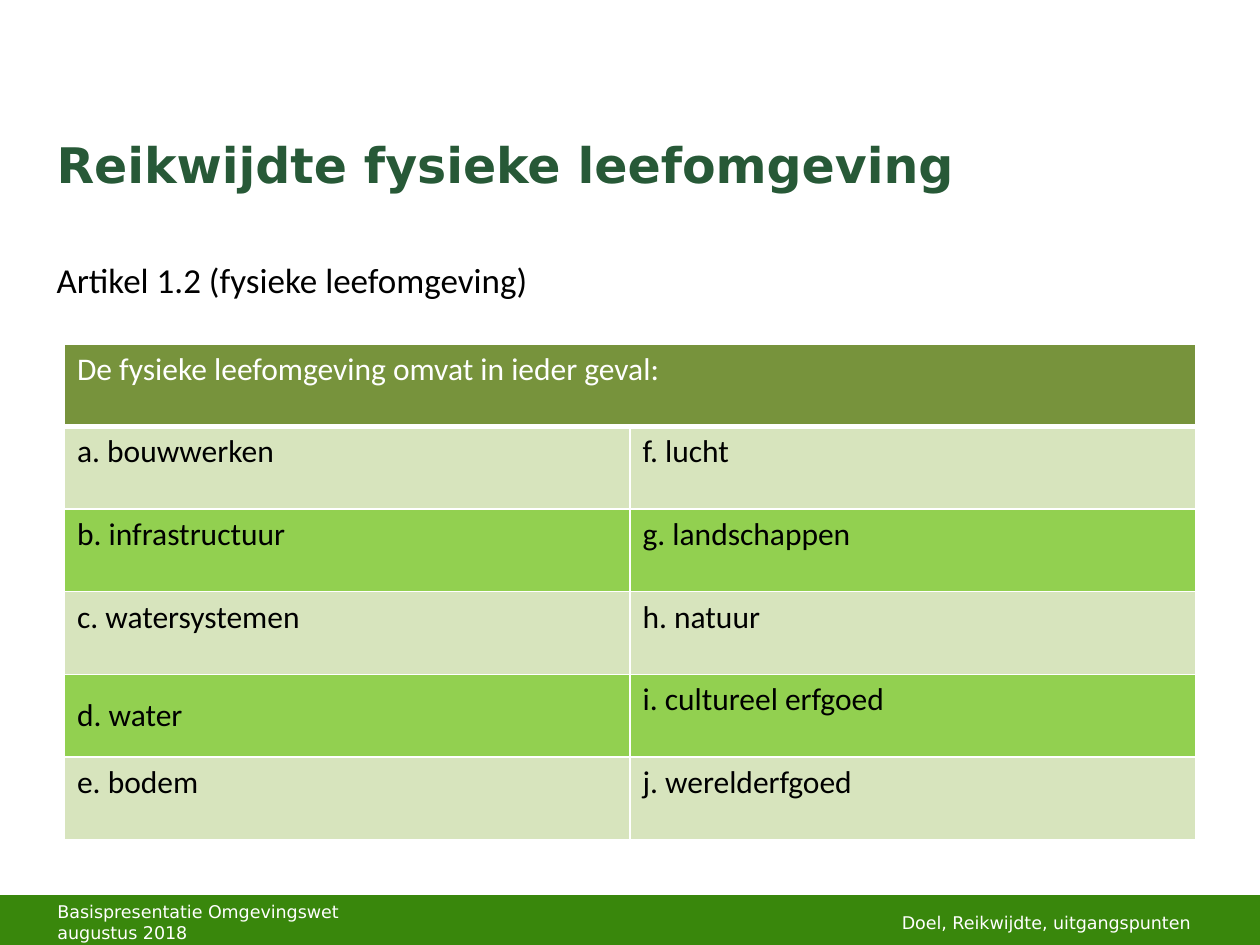
"""Build the slide on the scope of the physical living environment."""
from dataclasses import dataclass

from lxml import etree
from pptx import Presentation
from pptx import util as u
from pptx.dml.color import RGBColor
from pptx.enum import shapes, text
from pptx.oxml.ns import qn


@dataclass(frozen=True)
class Theme:
    title: str = "275937"
    bar: str = "39870C"
    head: str = "77933C"
    pale: str = "D7E4BD"
    lime: str = "92D050"
    white: str = "FFFFFF"
    black: str = "000000"
    sans: str = "DejaVu Sans"
    body: str = "Calibri"
    big: int = 28
    lead: int = 20
    cell: int = 18
    foot: int = 10


@dataclass(frozen=True)
class Label:
    words: str
    left: float
    top: float
    width: float
    height: float
    size: int
    face: str
    color: str
    bold: bool = False
    anchor: text.MSO_ANCHOR = text.MSO_ANCHOR.MIDDLE


T = Theme()
FOOT = (18.08, 6.78, 1.02, T.foot, T.sans, T.white)
LABELS = [
    Label("Reikwijdte fysieke leefomgeving", 0.89, 2.51, 23.39, 1.6,
          T.big, T.sans, T.title, bold=True),
    Label("Artikel 1.2 (fysieke leefomgeving)", 0.89, 5.08, 20.8, 1.12,
          T.lead, T.body, T.black, anchor=text.MSO_ANCHOR.TOP),
    Label("Basispresentatie Omgevingswet augustus 2018", 0.91, *FOOT),
    Label("Doel, Reikwijdte, uitgangspunten", 17.93, *FOOT),
]
HEAD = "De fysieke leefomgeving omvat in ieder geval:"
ROWS = [
    ("a. bouwwerken", "f. lucht"),
    ("b. infrastructuur", "g. landschappen"),
    ("c. watersystemen", "h. natuur"),
    ("d. water", "i. cultureel erfgoed"),
    ("e. bodem", "j. werelderfgoed"),
]


def style(frame, size: int, face: str, color: str, bold: bool = False) -> None:
    for para in frame.paragraphs:
        for run in para.runs:
            font = run.font
            font.size, font.name, font.bold = u.Pt(size), face, bold
            font.color.rgb = RGBColor.from_string(color)


def put_label(slide, item: Label) -> None:
    area = (u.Cm(n) for n in (item.left, item.top, item.width, item.height))
    frame = slide.shapes.add_textbox(*area).text_frame
    frame.word_wrap = True
    frame.vertical_anchor = item.anchor
    frame.text = item.words
    style(frame, item.size, item.face, item.color, item.bold)


def put_bar(slide) -> None:
    bar = slide.shapes.add_shape(shapes.MSO_SHAPE.RECTANGLE, 0, u.Cm(18.08),
                                 u.Cm(25.4), u.Cm(0.99))
    bar.shadow.inherit = False
    bar.fill.solid()
    bar.fill.fore_color.rgb = RGBColor.from_string(T.bar)
    bar.line.color.rgb = RGBColor.from_string(T.bar)
    bar.line.width = u.Pt(2)


def paint(cell, fill: str, base: int = 1) -> None:
    props = cell._tc.get_or_add_tcPr()
    for side, width in zip("LRTB", (1, 1, 1, base)):
        line = etree.SubElement(props, qn(f"a:ln{side}"), w=str(u.Pt(width)))
        solid = etree.SubElement(line, qn("a:solidFill"))
        etree.SubElement(solid, qn("a:srgbClr"), val=T.white)
    cell.fill.solid()
    cell.fill.fore_color.rgb = RGBColor.from_string(fill)


def put_table(slide) -> None:
    count = len(ROWS) + 1
    grid = slide.shapes.add_table(count, 2, u.Cm(1.3), u.Cm(6.93),
                                  u.Cm(22.8), u.Cm(10)).table
    for row in grid.rows:
        row.height = u.Cm(10 / count)
    for cell in grid.rows[0].cells:
        paint(cell, T.head, base=3)
    top = grid.cell(0, 0)
    top.merge(grid.cell(0, 1))
    top.text_frame.text = HEAD
    style(top.text_frame, T.cell, T.body, T.white)
    for r, words in enumerate(ROWS, 1):
        for c, word in enumerate(words):
            cell = grid.cell(r, c)
            paint(cell, T.pale if r % 2 else T.lime)
            cell.text_frame.text = word
            cell.text_frame.paragraphs[0].alignment = text.PP_ALIGN.JUSTIFY
            style(cell.text_frame, T.cell, T.body, T.black)
    grid.cell(4, 0).vertical_anchor = text.MSO_ANCHOR.MIDDLE


def main() -> None:
    deck = Presentation()
    deck.slide_width, deck.slide_height = u.Cm(25.4), u.Cm(19.05)
    slide = deck.slides.add_slide(deck.slide_layouts[6])
    put_bar(slide)
    put_table(slide)
    for item in LABELS:
        put_label(slide, item)
    deck.save("out.pptx")


if __name__ == "__main__":
    main()
